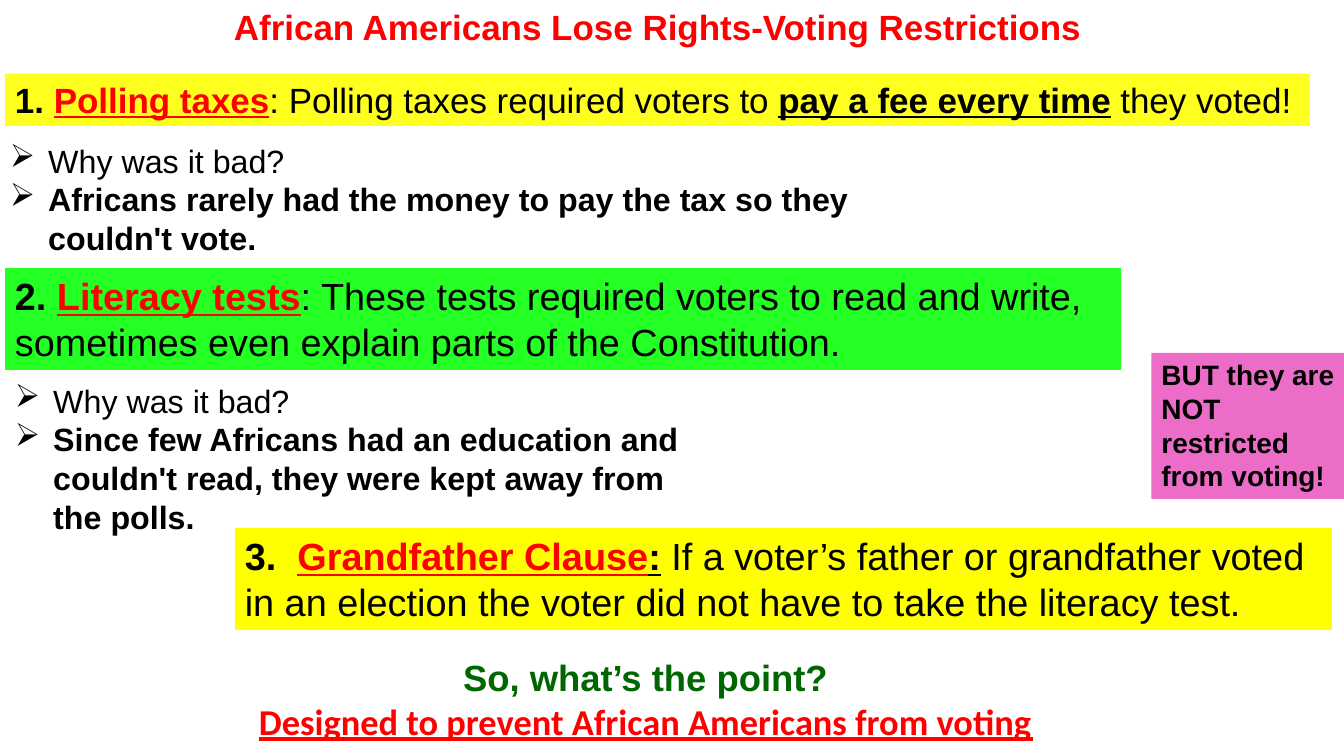
from lxml import etree
from pptx import Presentation
from pptx.dml.color import RGBColor
from pptx.enum.shapes import MSO_SHAPE
from pptx.enum.text import MSO_ANCHOR, MSO_AUTO_SIZE, PP_ALIGN
from pptx.oxml.ns import qn
from pptx.util import Pt

PX = 9144
RECT = MSO_SHAPE.RECTANGLE
TOP = MSO_ANCHOR.TOP
GROW = MSO_AUTO_SIZE.SHAPE_TO_FIT_TEXT
LEFT, CENTER = PP_ALIGN.LEFT, PP_ALIGN.CENTER

BLACK = RGBColor(0x00, 0x00, 0x00)
RED = RGBColor(0xFF, 0x00, 0x00)
DARK_GREEN = RGBColor(0x00, 0x66, 0x00)
YELLOW = RGBColor(0xFF, 0xFF, 0x00)
GREEN = RGBColor(0x00, 0xFF, 0x00)
PINK = RGBColor(0xEB, 0x6D, 0xC7)

PLAIN = {"name": "Arial", "bold": False, "underline": False}
BOLD = {**PLAIN, "bold": True}
KEY = {**BOLD, "underline": True}
CONCLUSION = {**KEY, "name": "Calibri"}


def px(*lengths):
    """Turn px lengths into EMU."""
    return [n * PX for n in lengths]


def write(sp, size, paragraphs, align=LEFT):
    """Fill a shape with paragraphs of (text, format, colour) runs."""
    tf = sp.text_frame
    tf.word_wrap, tf.auto_size, tf.vertical_anchor = True, GROW, TOP
    for i, runs in enumerate(paragraphs):
        p = tf.add_paragraph() if i else tf.paragraphs[0]
        p.alignment = align
        p.line_spacing = Pt(round(size * 1.2, 1))
        for text, style, color in runs:
            r = p.add_run()
            r.text = text
            r.font.size = Pt(size)
            r.font.color.rgb = color
            for key, value in style.items():
                setattr(r.font, key, value)


def add_title(s, box, text):
    """Place and format the slide title."""
    sp = s.shapes.title
    sp.left, sp.top, sp.width, sp.height = px(*box)
    write(sp, 25, [[(text, BOLD, RED)]], CENTER)


def add_band(s, box, fill, size, runs, opacity=100):
    """Draw a coloured band holding one paragraph."""
    sp = s.shapes.add_shape(RECT, *px(*box))
    sp.shadow.inherit = False
    sp.line.fill.background()
    sp.fill.solid()
    sp.fill.fore_color.rgb = fill
    if opacity < 100:
        color = sp.fill._xPr.find(".//" + qn("a:srgbClr"))
        etree.SubElement(color, qn("a:alpha"), val=str(opacity * 1000))
    write(sp, size, [runs])


def add_reason(s, box, answer):
    """Ask why the restriction was bad and answer in arrow bullets."""
    sp = s.shapes.add_textbox(*px(*box))
    write(sp, 23, [[("Why was it bad?", PLAIN, BLACK)], [(answer, BOLD, BLACK)]])
    for p in sp.text_frame.paragraphs:
        pPr = p._p.get_or_add_pPr()
        indent = 38 * PX
        pPr.set("marL", str(indent))
        pPr.set("indent", str(-indent))
        etree.SubElement(pPr, qn("a:buChar"), char="➢")


def add_conclusion(s, box):
    """Write the closing question and its answer."""
    sp = s.shapes.add_textbox(*px(*box))
    write(sp, 26, [
        [("So, what’s the point?", BOLD, DARK_GREEN)],
        [("Designed to prevent African Americans from voting", CONCLUSION, RED)],
    ], CENTER)


def main():
    """Build the slide on voting restrictions."""
    prs = Presentation()
    prs.slide_width, prs.slide_height = px(1333, 750)
    s = prs.slides.add_slide(prs.slide_layouts[5])
    add_band(s, (233, 524, 1088, 101), YELLOW, 27, [
        ("3.  ", BOLD, BLACK),
        ("Grandfather Clause", KEY, RED),
        (":", KEY, BLACK),
        (" ", BOLD, BLACK),
        ("If a voter’s father or grandfather voted in an election "
         "the voter did not have to take the literacy test.", PLAIN, BLACK),
    ])
    add_title(s, (28, 0, 1248, 82), "African Americans Lose Rights-Voting Restrictions")
    add_band(s, (5, 73, 1294, 52), YELLOW, 25, [
        ("1. ", BOLD, BLACK),
        ("Polling taxes", KEY, RED),
        (": Polling taxes required voters to ", PLAIN, BLACK),
        ("pay a fee every time", KEY, BLACK),
        (" they voted!", PLAIN, BLACK),
    ], 88)
    add_reason(s, (5, 373, 700, 165),
               "Since few Africans had an education and couldn't read, "
               "they were kept away from the polls.")
    add_conclusion(s, (207, 645, 867, 138))
    add_reason(s, (0, 135, 931, 126),
               "Africans rarely had the money to pay the tax so they couldn't vote.")
    add_band(s, (5, 266, 1107, 101), GREEN, 27, [
        ("2. ", BOLD, BLACK),
        ("Literacy tests", KEY, RED),
        (": These tests required voters to read and write, "
         "sometimes even explain parts of the Constitution.", PLAIN, BLACK),
    ], 86)
    add_band(s, (1142, 350, 192, 145), PINK, 20, [
        ("BUT they are NOT restricted from voting!", BOLD, BLACK),
    ])
    prs.save("out.pptx")


if __name__ == "__main__":
    main()
